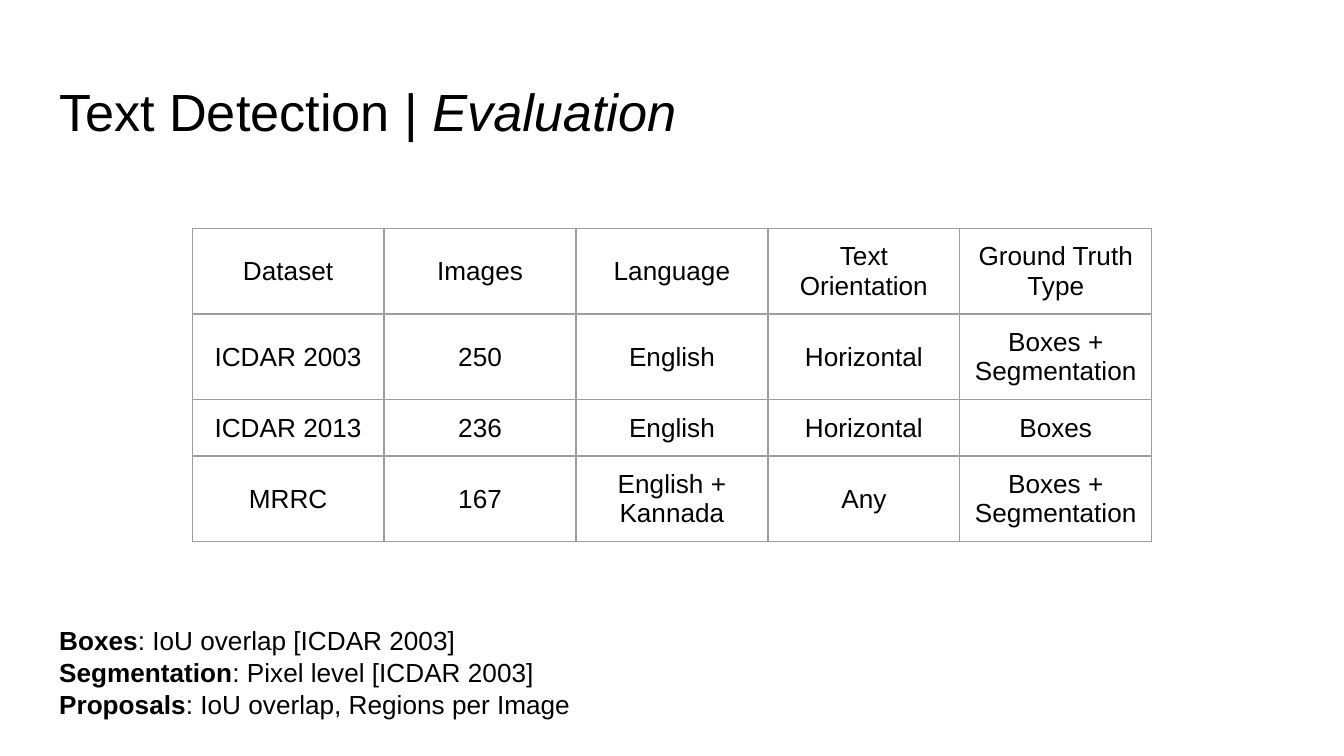
from dataclasses import dataclass

import pptx
import pptx.dml.color
import pptx.enum.text
import pptx.oxml
import pptx.oxml.ns
import pptx.util

Inches = pptx.util.Inches
Pt = pptx.util.Pt
Anchor = pptx.enum.text.MSO_ANCHOR
Align = pptx.enum.text.PP_ALIGN

FONT = "Arial"
BLACK = "000000"
GRID = "9E9E9E"
INSET = 0.1


@dataclass
class Span:
    text: str
    bold: bool = False
    italic: bool = False


TITLE = [Span("Text Detection | "), Span("Evaluation", italic=True)]
METRICS = [
    [Span("Boxes", bold=True), Span(": IoU overlap [ICDAR 2003]")],
    [Span("Segmentation", bold=True), Span(": Pixel level [ICDAR 2003]")],
    [Span("Proposals", bold=True), Span(": IoU overlap, Regions per Image")],
]
DATASETS = [
    ["Dataset", "Images", "Language", "Text Orientation", "Ground Truth Type"],
    ["ICDAR 2003", "250", "English", "Horizontal", "Boxes + Segmentation"],
    ["ICDAR 2013", "236", "English", "Horizontal", "Boxes"],
    ["MRRC", "167", "English + Kannada", "Any", "Boxes + Segmentation"],
]
TABLE_WIDTH = 7.14
ROW_HEIGHTS = [0.62, 0.62, 0.4, 0.62]


def color(value: str) -> pptx.dml.color.RGBColor:
    return pptx.dml.color.RGBColor.from_string(value)


def set_insets(target) -> None:
    """Give a text frame or a table cell equal margins."""
    target.margin_left = target.margin_right = Inches(INSET)
    target.margin_top = target.margin_bottom = Inches(INSET)


def add_spans(para, spans: list[Span], size: float) -> None:
    for item in spans:
        span = para.add_run()
        span.text = item.text
        span.font.name = FONT
        span.font.size = Pt(size)
        span.font.bold = item.bold
        span.font.italic = item.italic
        span.font.color.rgb = color(BLACK)


def fill_placeholder(box, top: float, height: float, lines: list[list[Span]],
                     size: float, spacing: float) -> None:
    box.left, box.top = Inches(0.34), Inches(top)
    box.width, box.height = Inches(9.32), Inches(height)
    frame = box.text_frame
    frame.word_wrap = True
    frame.auto_size = pptx.enum.text.MSO_AUTO_SIZE.NONE
    frame.vertical_anchor = Anchor.TOP
    set_insets(frame)
    for index, spans in enumerate(lines):
        para = frame.paragraphs[0] if index == 0 else frame.add_paragraph()
        # Plain lines: no bullet and no hanging indent
        properties = para._p.get_or_add_pPr()
        properties.set("marL", "0")
        properties.set("indent", "0")
        properties.append(pptx.oxml.parse_xml(
            f'<a:buNone {pptx.oxml.ns.nsdecls("a")}/>'))
        para.alignment = Align.LEFT
        para.line_spacing = spacing
        para.space_before = para.space_after = Pt(0)
        add_spans(para, spans, size)


def set_borders(cell, widths: dict[str, float]) -> None:
    properties = cell._tc.get_or_add_tcPr()
    for index, (side, width) in enumerate(widths.items()):
        properties.insert(index, pptx.oxml.parse_xml(
            f'<a:ln{side} {pptx.oxml.ns.nsdecls("a")} w="{Pt(width)}">'
            f'<a:solidFill><a:srgbClr val="{GRID}"/></a:solidFill>'
            f'</a:ln{side}>'))


def add_dataset_table(page, left: float, top: float) -> None:
    column_count = len(DATASETS[0])
    table = page.shapes.add_table(
        len(DATASETS), column_count, Inches(left), Inches(top),
        Inches(TABLE_WIDTH), Inches(sum(ROW_HEIGHTS))).table
    table.first_row = table.horz_banding = False
    for column in table.columns:
        column.width = Inches(TABLE_WIDTH / column_count)
    for r, (height, texts) in enumerate(zip(ROW_HEIGHTS, DATASETS)):
        table.rows[r].height = Inches(height)
        for c, text in enumerate(texts):
            cell = table.cell(r, c)
            cell.fill.background()
            cell.vertical_anchor = Anchor.MIDDLE
            set_insets(cell)
            para = cell.text_frame.paragraphs[0]
            para.alignment = Align.CENTER
            add_spans(para, [Span(text)], 14)
            # Thicker rules follow the header row and the first column
            set_borders(cell, {
                "L": 1.5 if c == 1 else 0.75,
                "R": 1.5 if c == 0 else 0.75,
                "T": 1.5 if r == 1 else 0.75,
                "B": 1.5 if r == 0 else 0.75,
            })


def main() -> None:
    deck = pptx.Presentation()
    # Widescreen page, 16:9
    deck.slide_width = Inches(10)
    deck.slide_height = Inches(10) * 9 // 16
    page = deck.slides.add_slide(deck.slide_layouts[1])

    # Title
    fill_placeholder(page.shapes.title, 0.49, 0.63, [TITLE], 28, 1)
    # Datasets
    add_dataset_table(page, 1.43, 1.7)
    # Metrics for each ground truth type
    fill_placeholder(page.placeholders[1], 4.54, 0.87, METRICS, 14, 1.02)

    deck.save("out.pptx")


if __name__ == "__main__":
    main()
